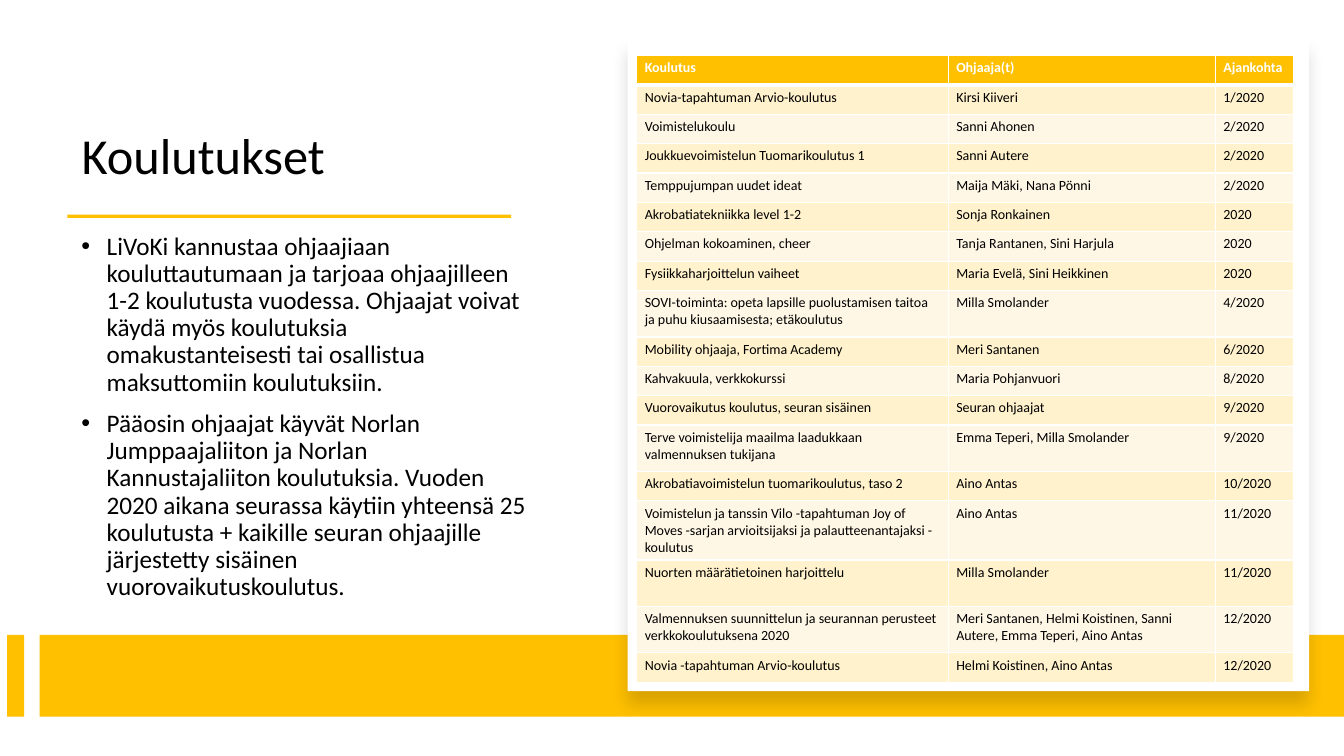
from lxml import etree
from pptx import Presentation
from pptx import util as u
from pptx.dml.color import RGBColor
from pptx.enum import shapes, text
from pptx.oxml import parse_xml
from pptx.oxml.ns import nsdecls, qn

GOLD, WHITE, BLACK = "FFC000", "FFFFFF", "000000"
BANDS = ["FFF7E6", "FFF2CC"]


def paint(target, colour):
    """Give a shape, cell or font a solid colour."""
    target.fill.solid()
    target.fill.fore_color.rgb = RGBColor.from_string(colour)


def write(paragraph, content, size, colour=BLACK, bold=False, spacing=1.0, before=0):
    paragraph.line_spacing = spacing
    paragraph.space_before = u.Pt(before)
    paragraph.alignment = text.PP_ALIGN.LEFT
    run = paragraph.add_run()
    run.text = content
    run.font.name = "Calibri"
    run.font.size = u.Pt(size)
    run.font.bold = bold
    paint(run.font, colour)


presentation = Presentation()
presentation.slide_width = u.Cm(33.87)
presentation.slide_height = u.Cm(19.05)
slide = presentation.slides.add_slide(presentation.slide_layouts[5])

# Title
title = slide.shapes.title
title.left, title.top, title.width, title.height = u.Cm(1.8), u.Cm(1.47), u.Cm(11.89), u.Cm(3.33)
title.text_frame.vertical_anchor = text.MSO_ANCHOR.BOTTOM
title.text_frame.word_wrap = True
write(title.text_frame.paragraphs[0], "Koulutukset", 36, spacing=0.9)

# Body text
body = slide.shapes.add_textbox(u.Cm(1.8), u.Cm(5.64), u.Cm(11.89), u.Cm(9.75))
body.text_frame.word_wrap = True
body.text_frame.vertical_anchor = text.MSO_ANCHOR.MIDDLE
points = [
    "LiVoKi kannustaa ohjaajiaan kouluttautumaan ja tarjoaa ohjaajilleen 1-2 koulutusta "
    "vuodessa. Ohjaajat voivat käydä myös koulutuksia omakustanteisesti tai osallistua "
    "maksuttomiin koulutuksiin.",
    "Pääosin ohjaajat käyvät Norlan Jumppaajaliiton ja Norlan Kannustajaliiton "
    "koulutuksia. Vuoden 2020 aikana seurassa käytiin yhteensä 25 koulutusta + kaikille "
    "seuran ohjaajille järjestetty sisäinen vuorovaikutuskoulutus.",
]
for index, point in enumerate(points):
    frame = body.text_frame
    paragraph = frame.add_paragraph() if index else frame.paragraphs[0]
    write(paragraph, point, 18, spacing=0.9, before=10)
    properties = paragraph._p.get_or_add_pPr()
    properties.set("marL", str(u.Cm(0.64)))
    properties.set("indent", str(-u.Cm(0.64)))
    etree.SubElement(properties, qn("a:buFont")).set("typeface", "Arial")
    etree.SubElement(properties, qn("a:buChar")).set("char", "•")

# Title rule, bottom bands and the white card behind the table
for left, top, width, height, colour in [
    (1.7, 5.41, 11.18, 0.08, GOLD),
    (0.18, 16, 0.43, 2.06, GOLD),
    (1, 16, 32.87, 2.06, GOLD),
    (15.82, 0.99, 17.17, 16.43, WHITE),
]:
    panel = slide.shapes.add_shape(
        shapes.MSO_SHAPE.RECTANGLE, u.Cm(left), u.Cm(top), u.Cm(width), u.Cm(height))
    panel.shadow.inherit = False
    panel.line.fill.background()
    paint(panel, colour)

card_effects = panel._element.spPr.find(qn("a:effectLst"))
card_effects.append(parse_xml(
    f'<a:outerShdw {nsdecls("a")} blurRad="{u.Pt(11)}" dist="{u.Pt(10)}" dir="5400000" '
    'algn="t" rotWithShape="0"><a:srgbClr val="000000"><a:alpha val="15000"/></a:srgbClr>'
    '</a:outerShdw>'))

# Training table
trainings = [
    ("Koulutus", "Ohjaaja(t)", "Ajankohta"),
    ("Novia-tapahtuman Arvio-koulutus", "Kirsi Kiiveri", "1/2020"),
    ("Voimistelukoulu", "Sanni Ahonen", "2/2020"),
    ("Joukkuevoimistelun Tuomarikoulutus 1", "Sanni Autere", "2/2020"),
    ("Temppujumpan uudet ideat", "Maija Mäki, Nana Pönni", "2/2020"),
    ("Akrobatiatekniikka level 1-2", "Sonja Ronkainen", "2020"),
    ("Ohjelman kokoaminen, cheer", "Tanja Rantanen, Sini Harjula", "2020"),
    ("Fysiikkaharjoittelun vaiheet", "Maria Evelä, Sini Heikkinen", "2020"),
    ("SOVI-toiminta: opeta lapsille puolustamisen taitoa ja puhu kiusaamisesta; etäkoulutus",
     "Milla Smolander", "4/2020"),
    ("Mobility ohjaaja, Fortima Academy", "Meri Santanen", "6/2020"),
    ("Kahvakuula, verkkokurssi", "Maria Pohjanvuori", "8/2020"),
    ("Vuorovaikutus koulutus, seuran sisäinen", "Seuran ohjaajat", "9/2020"),
    ("Terve voimistelija maailma laadukkaan valmennuksen tukijana",
     "Emma Teperi, Milla Smolander", "9/2020"),
    ("Akrobatiavoimistelun tuomarikoulutus, taso 2", "Aino Antas", "10/2020"),
    ("Voimistelun ja tanssin Vilo -tapahtuman Joy of Moves -sarjan arvioitsijaksi ja "
     "palautteenantajaksi - koulutus", "Aino Antas", "11/2020"),
    ("Nuorten määrätietoinen harjoittelu", "Milla Smolander", "11/2020"),
    ("Valmennuksen suunnittelun ja seurannan perusteet verkkokoulutuksena 2020",
     "Meri Santanen, Helmi Koistinen, Sanni Autere, Emma Teperi, Aino Antas", "12/2020"),
    ("Novia -tapahtuman Arvio-koulutus", "Helmi Koistinen, Aino Antas", "12/2020"),
]
tall_rows = {8: 1.17, 12: 1.17, 14: 1.49, 15: 1.17, 16: 1.17}
table = slide.shapes.add_table(
    len(trainings), 3, u.Cm(16.05), u.Cm(1.4), u.Cm(16.56), u.Cm(15.79)).table
for column, width in zip(table.columns, [7.85, 6.73, 1.98]):
    column.width = u.Cm(width)

for row, training in enumerate(trainings):
    table.rows[row].height = u.Cm(tall_rows.get(row, 0.74))
    header = row == 0
    for column, content in enumerate(training):
        cell = table.cell(row, column)
        cell.margin_left = cell.margin_right = u.Cm(0.2)
        cell.margin_top = cell.margin_bottom = u.Cm(0.1)
        write(cell.text_frame.paragraphs[0], content, 10,
              colour=WHITE if header else BLACK, bold=header)
        for side in ["L", "R", "T", "B"]:
            under_header = (row, side) in [(0, "B"), (1, "T")]
            cell._tc.get_or_add_tcPr().append(parse_xml(
                f'<a:ln{side} {nsdecls("a")} w="{u.Pt(3 if under_header else 1)}">'
                f'<a:solidFill><a:srgbClr val="{WHITE}"/></a:solidFill></a:ln{side}>'))
        paint(cell, GOLD if header else BANDS[row % 2])

presentation.save("out.pptx")
